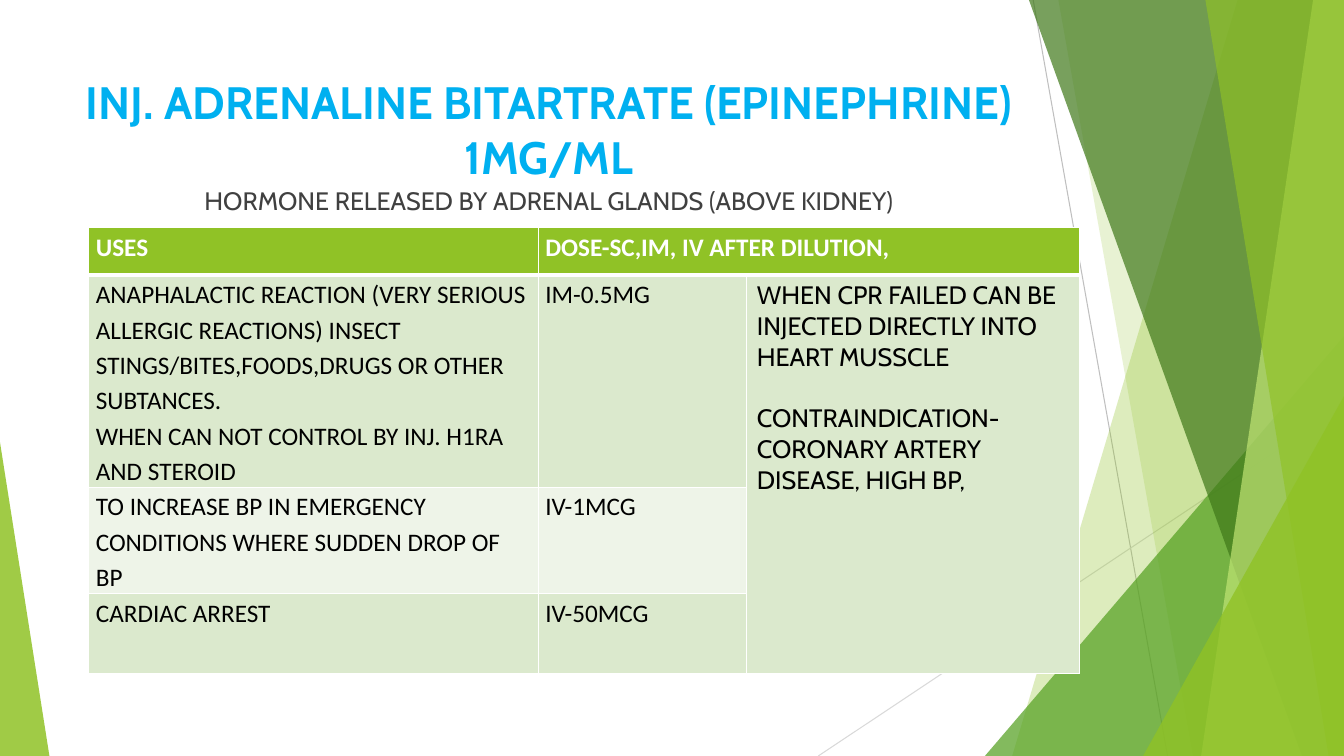
from lxml.etree import SubElement
from pptx import Presentation
from pptx.dml.color import RGBColor
from pptx.enum.shapes import MSO_CONNECTOR as Connector, MSO_SHAPE as Shape
from pptx.enum.text import MSO_ANCHOR as Anchor, MSO_AUTO_SIZE as AutoSize, PP_ALIGN as Align
from pptx.oxml.ns import qn
from pptx.util import Pt

WIDTH, HEIGHT = 960, 540
WHITE = RGBColor(0xFF, 0xFF, 0xFF)
BLACK = RGBColor(0, 0, 0)
TITLE_BLUE = RGBColor(0x00, 0xB0, 0xF0)
BODY_GRAY = RGBColor(0x40, 0x40, 0x40)
LINE_GRAY = RGBColor(0xBF, 0xBF, 0xBF)
LINE_PALE = RGBColor(0xD9, 0xD9, 0xD9)
LIME = RGBColor(0x90, 0xC2, 0x26)
GREEN = RGBColor(0x54, 0xA0, 0x21)
DARK_GREEN = RGBColor(0x3F, 0x78, 0x19)
PALE_LIME = RGBColor(0xC0, 0xE4, 0x74)
BAND_DARK = RGBColor(0xDB, 0xE9, 0xCD)
BAND_LIGHT = RGBColor(0xEE, 0xF4, 0xE8)

HEADINGS = ["USES", "DOSE-SC,IM, IV AFTER DILUTION,"]
USES = [
    (["ANAPHALACTIC REACTION (VERY SERIOUS ALLERGIC REACTIONS) INSECT "
      "STINGS/BITES,FOODS,DRUGS OR OTHER SUBTANCES.",
      "WHEN CAN NOT CONTROL BY INJ. H1RA AND STEROID"], "IM-0.5MG"),
    (["TO INCREASE BP IN EMERGENCY CONDITIONS WHERE SUDDEN DROP OF BP"], "IV-1MCG"),
    (["CARDIAC ARREST"], "IV-50MCG"),
]
REMARKS = ["WHEN CPR FAILED CAN BE INJECTED DIRECTLY INTO HEART MUSSCLE",
           "CONTRAINDICATION-CORONARY ARTERY DISEASE, HIGH BP,"]


def write_text(frame, texts, font="Calibri", size=18, color=BLACK, bold=False,
               align=Align.LEFT, spacing=1.0, gap=0):
    for index, text in enumerate(texts):
        paragraph = frame.add_paragraph() if index else frame.paragraphs[0]
        paragraph.alignment = align
        paragraph.line_spacing = spacing
        paragraph.space_before = Pt(gap if index else 0)
        paragraph.space_after = Pt(0)
        run = paragraph.add_run()
        run.text = text
        run.font.name, run.font.size = font, Pt(size)
        run.font.bold, run.font.color.rgb = bold, color


def paint(shape, color, opacity):
    shape.shadow.inherit = False
    shape.fill.solid()
    shape.fill.fore_color.rgb = color
    shape.line.fill.background()
    color_element = shape.element.find(".//" + qn("a:srgbClr"))
    SubElement(color_element, qn("a:alpha"), val=str(opacity * 1000))


def add_line(slide, start, end, color):
    line = slide.shapes.add_connector(Connector.STRAIGHT, *map(Pt, start + end))
    line.line.color.rgb = color
    line.line.width = Pt(0.75)
    SubElement(line.element.spPr, qn("a:effectLst"))


def add_facet(slide, right, height, top_x, bottom_x, color, opacity):
    """Fill the area between a slanted edge and the right side."""
    builder = slide.shapes.build_freeform(top_x, 0, scale=Pt(1))
    builder.add_line_segments([(right, 0), (right, height), (bottom_x, height)])
    paint(builder.convert_to_shape(), color, opacity)


def add_corner(slide, left, bottom, width, height, apex, color, opacity):
    triangle = slide.shapes.add_shape(
        Shape.ISOSCELES_TRIANGLE, Pt(left), Pt(bottom - height), Pt(width), Pt(height))
    triangle.adjustments[0] = apex
    paint(triangle, color, opacity)


def add_decoration(slide, width, height):
    # Thin lines
    add_line(slide, (738, 0), (834, height), LINE_GRAY)
    add_line(slide, (width, 290), (584.5, height), LINE_PALE)
    # Overlapping facets, back to front
    add_facet(slide, width, height, 884.2, 722.9, LIME, 30)
    add_facet(slide, width, height, 756, 851.8, LIME, 20)
    add_corner(slide, width - 256.5, height, 256.5, 300, 1, GREEN, 72)
    add_facet(slide, width, height, 735.1, 929.5, DARK_GREEN, 70)
    add_facet(slide, width, height, 938.2, 858.2, PALE_LIME, 70)
    add_facet(slide, width, height, 861.1, 949, LIME, 65)
    add_corner(slide, width - 143.5, height, 143.5, 257, 1, LIME, 80)
    add_corner(slide, 0, height, 35.3, 224, 0, LIME, 85)


def fill_placeholder(shape, left, top, width, height, text, **text_format):
    shape.left, shape.top, shape.width, shape.height = map(Pt, (left, top, width, height))
    frame = shape.text_frame
    frame.word_wrap = True
    frame.auto_size = AutoSize.NONE
    frame.vertical_anchor = Anchor.TOP
    properties = frame.paragraphs[0]._p.get_or_add_pPr()
    properties.set("marL", "0")
    properties.set("indent", "0")
    SubElement(properties, qn("a:buNone"))
    write_text(frame, [text], font="Cabin", align=Align.CENTER, **text_format)
    # Bring the text in front of the decoration
    shape.element.getparent().append(shape.element)


def style_cell(cell, fill, bottom_border):
    cell.fill.solid()
    cell.fill.fore_color.rgb = fill
    properties = cell._tc.get_or_add_tcPr()
    borders = {"a:lnL": 1, "a:lnR": 1, "a:lnT": 1, "a:lnB": bottom_border}
    for index, (side, weight) in enumerate(borders.items()):
        border = SubElement(properties, qn(side), w=str(Pt(weight)))
        SubElement(SubElement(border, qn("a:solidFill")), qn("a:srgbClr"), val=str(WHITE))
        properties.insert(index, border)


def write_cell(cell, texts, **text_format):
    cell.margin_left = cell.margin_right = Pt(5)
    cell.margin_top = cell.margin_bottom = 0
    write_text(cell.text_frame, texts, spacing=1.15, **text_format)


def add_dose_table(slide, left, top, column_widths, row_heights):
    table = slide.shapes.add_table(
        len(row_heights), len(column_widths), Pt(left), Pt(top),
        Pt(sum(column_widths)), Pt(sum(row_heights))).table
    for column, width in zip(table.columns, column_widths):
        column.width = Pt(width)
    for row_index, height in enumerate(row_heights):
        table.rows[row_index].height = Pt(height)
        band = BAND_DARK if row_index % 2 else BAND_LIGHT
        for cell in table.rows[row_index].cells:
            style_cell(cell, band if row_index else LIME, 1 if row_index else 3)
    # Merged header and remarks cells
    table.cell(0, 1).merge(table.cell(0, 2))
    table.cell(1, 2).merge(table.cell(3, 2))
    for column, heading in enumerate(HEADINGS):
        write_cell(table.cell(0, column), [heading], color=WHITE, bold=True)
    for row, (use, dose) in enumerate(USES, start=1):
        write_cell(table.cell(row, 0), use)
        write_cell(table.cell(row, 1), [dose])
    write_text(table.cell(1, 2).text_frame, REMARKS, font="Cabin", gap=22)


def add_drug_slide(presentation):
    slide = presentation.slides.add_slide(presentation.slide_layouts[1])
    add_decoration(slide, WIDTH, HEIGHT)
    fill_placeholder(slide.shapes.title, 53.5, 49.5, 677, 88.5,
                     "INJ. ADRENALINE BITARTRATE (EPINEPHRINE) 1MG/ML",
                     size=32.4, color=TITLE_BLUE, bold=True)
    fill_placeholder(slide.placeholders[1], 53.5, 129, 677, 346,
                     "HORMONE RELEASED BY ADRENAL GLANDS (ABOVE KIDNEY)", color=BODY_GRAY)
    add_dose_table(slide, 63.5, 162.5, [321, 149, 237.5], [34, 151, 76, 57])


def main():
    presentation = Presentation()
    presentation.slide_width, presentation.slide_height = Pt(WIDTH), Pt(HEIGHT)
    add_drug_slide(presentation)
    presentation.save("out.pptx")


if __name__ == "__main__":
    main()
